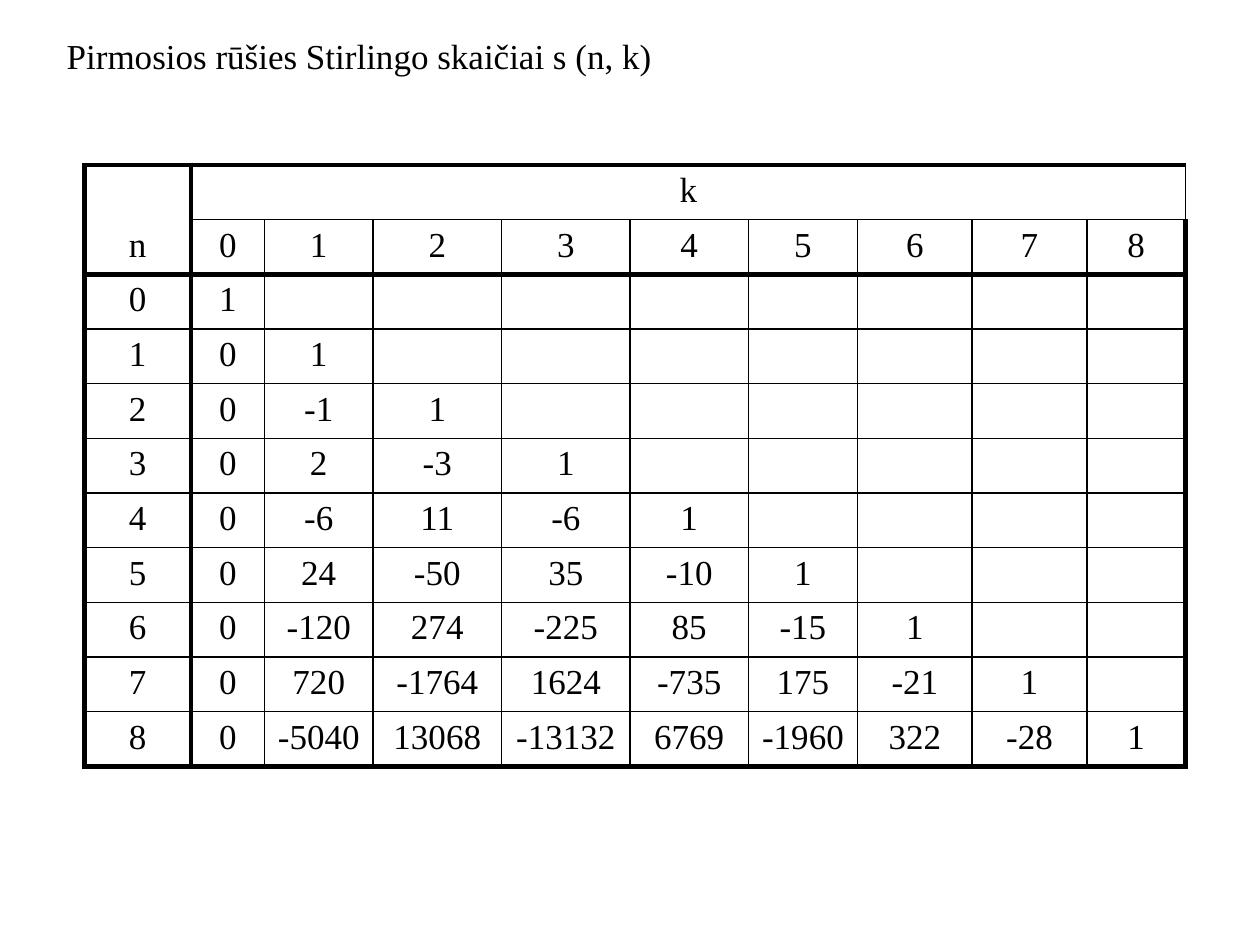
from dataclasses import dataclass

from lxml.etree import SubElement
from pptx import Presentation
from pptx.dml.color import RGBColor
from pptx.enum.text import MSO_ANCHOR as Anchor, PP_ALIGN as Align
from pptx.oxml.ns import qn
from pptx.util import Pt


@dataclass(frozen=True)
class Theme:
    font: str = "Times New Roman"
    size: float = 20
    ink: str = "000000"
    thin: float = 1
    thick: float = 3


def write(frame, text, *, theme, align=Align.LEFT):
    paragraph = frame.paragraphs[0]
    paragraph.alignment = align
    run = paragraph.add_run()
    run.text = text
    run.font.name = theme.font
    run.font.size = Pt(theme.size)
    run.font.color.rgb = RGBColor.from_string(theme.ink)


def set_borders(cell, widths, color):
    """Draw the left, right, top and bottom borders; a width of 0 hides one."""
    properties = cell._tc.get_or_add_tcPr()
    for position, (side, width) in enumerate(zip("LRTB", widths)):
        line = SubElement(properties, qn(f"a:ln{side}"), w=str(Pt(width)))
        if width:
            fill = SubElement(line, qn("a:solidFill"))
            SubElement(fill, qn("a:srgbClr"), val=color)
        else:
            SubElement(line, qn("a:noFill"))
        properties.insert(position, line)


def stirling_rows(count):
    """Signed Stirling numbers of the first kind, one triangle row per n."""
    row = [1]
    for n in range(count):
        yield row
        row = [left - n * above for left, above in zip([0] + row, row + [0])]


class SlideBuilder:
    def __init__(self, slide, theme):
        self.slide = slide
        self.theme = theme

    def text(self, content, left, top, width, height):
        box = self.slide.shapes.add_textbox(Pt(left), Pt(top), Pt(width), Pt(height))
        box.text_frame.word_wrap = True
        write(box.text_frame, content, theme=self.theme)

    def table(self, rows, left, top, widths, row_height, thick_rows, thick_columns):
        """Add a grid whose numbered grid lines are thick where listed."""
        frame = self.slide.shapes.add_table(
            len(rows), len(widths), Pt(left), Pt(top),
            Pt(sum(widths)), Pt(row_height * len(rows)))
        table = frame.table
        table.first_row = table.horz_banding = False
        for column, width in zip(table.columns, widths):
            column.width = Pt(width)
        for r, values in enumerate(rows):
            table.rows[r].height = Pt(row_height)
            for c in range(len(widths)):
                cell = table.cell(r, c)
                cell.fill.background()
                cell.vertical_anchor = Anchor.TOP
                cell.margin_left = cell.margin_right = Pt(3.6)
                edges = [self.line_width(c, thick_columns),
                         self.line_width(c + 1, thick_columns),
                         self.line_width(r, thick_rows),
                         self.line_width(r + 1, thick_rows)]
                if c == 0 and r < 2:
                    edges[3 - r] = 0  # the two corner cells read as one
                set_borders(cell, edges, self.theme.ink)
                if c < len(values) and values[c] != "":
                    write(cell.text_frame, str(values[c]),
                          theme=self.theme, align=Align.CENTER)
        return table

    def line_width(self, index, thick_lines):
        return self.theme.thick if index in thick_lines else self.theme.thin


def main():
    presentation = Presentation()
    presentation.slide_width, presentation.slide_height = Pt(720), Pt(540)
    slide = presentation.slides.add_slide(presentation.slide_layouts[6])
    builder = SlideBuilder(slide, Theme())

    builder.text("Pirmosios rūšies Stirlingo skaičiai s (n, k)", 31, 16, 663, 31)

    size = 9
    rows = [["", "k"], ["n", *range(size)]]
    rows += [[n, *numbers] for n, numbers in enumerate(stirling_rows(size))]
    widths = [61, 42, 62, 73.5, 73.5, 67.5, 62.5, 65.5, 65.5, 56.5]
    table = builder.table(rows, 48.2, 94.3, widths, 31.22,
                          thick_rows={0, 2, len(rows)},
                          thick_columns={0, 1, len(widths)})
    table.cell(0, 1).merge(table.cell(0, size))

    presentation.save("out.pptx")


if __name__ == "__main__":
    main()
